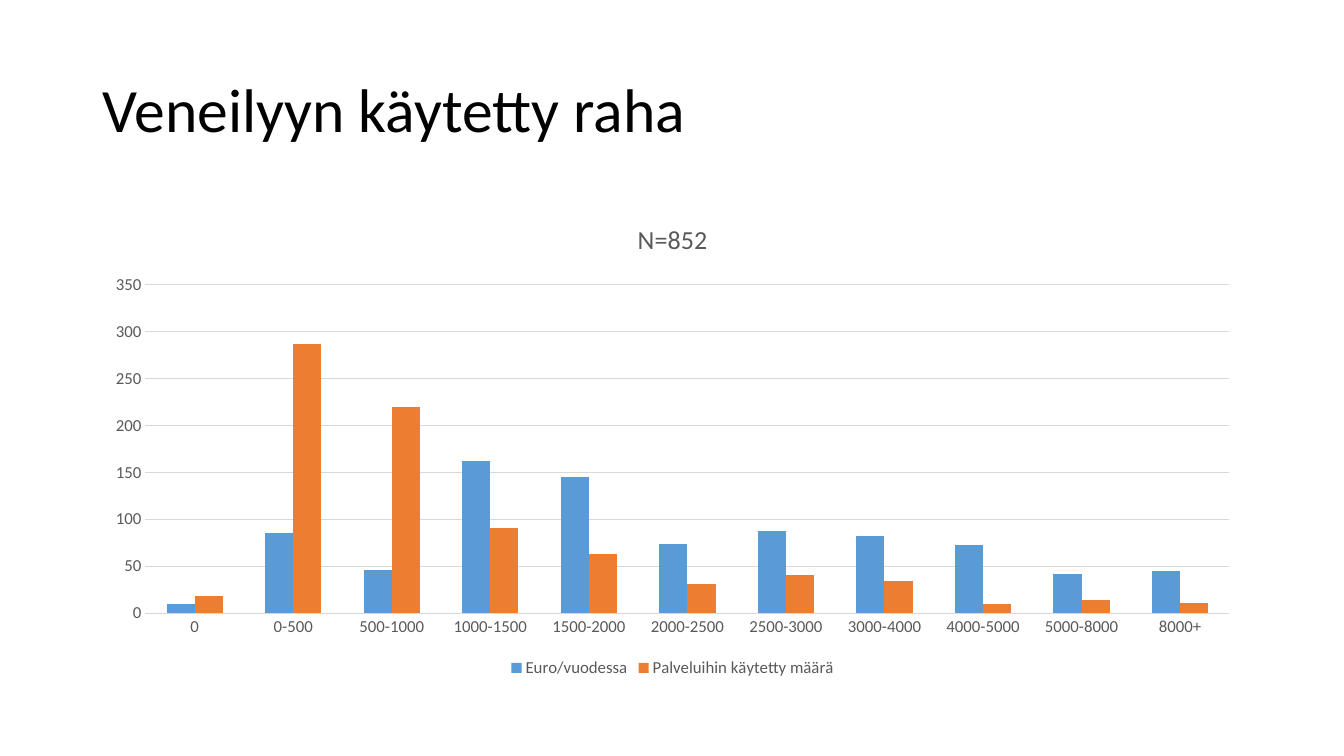
from dataclasses import dataclass

from pptx import Presentation
from pptx import util as u
from pptx.chart.data import CategoryChartData
from pptx.dml.color import RGBColor
from pptx.enum import chart as ch, text


@dataclass(frozen=True)
class Theme:
    font: str = "Calibri"
    title: str = "000000"
    label: str = "595959"
    grid: str = "D9D9D9"
    bars: tuple = ("5B9BD5", "ED7D31")
    title_size: float = 44
    chart_title_size: float = 18.6
    label_size: float = 12


THEME = Theme()
WIDTH, HEIGHT = u.Inches(13.33), u.Inches(7.5)
LEFT, SPAN = 0.069, 0.863
TITLE_BOX = (LEFT, 0.053, SPAN, 0.193)
CHART_BOX = (LEFT, 0.267, SPAN, 0.635)
CATEGORIES = ["0", "0-500", "500-1000", "1000-1500", "1500-2000", "2000-2500",
              "2500-3000", "3000-4000", "4000-5000", "5000-8000", "8000+"]
SERIES = {
    "Euro/vuodessa": [10, 85, 46, 162, 145, 74, 87, 82, 72, 42, 45],
    "Palveluihin käytetty määrä": [18, 287, 219, 91, 63, 31, 40, 34, 10, 14, 11],
}


def place(box):
    x, y, w, h = box
    return int(x * WIDTH), int(y * HEIGHT), int(w * WIDTH), int(h * HEIGHT)


def style_font(font, size, color):
    font.name = THEME.font
    font.size = u.Pt(size)
    font.bold = False
    font.color.rgb = RGBColor.from_string(color)


def style_line(line):
    line.color.rgb = RGBColor.from_string(THEME.grid)
    line.width = u.Pt(0.75)


def add_title(s, words):
    sp = s.shapes.title
    sp.left, sp.top, sp.width, sp.height = place(TITLE_BOX)
    tf = sp.text_frame
    tf.text = words
    tf.word_wrap = True
    tf.vertical_anchor = text.MSO_ANCHOR.MIDDLE
    p = tf.paragraphs[0]
    p.alignment = text.PP_ALIGN.LEFT
    p.line_spacing = 0.9
    style_font(p.font, THEME.title_size, THEME.title)


def style_axis(axis):
    axis.major_tick_mark = axis.minor_tick_mark = ch.XL_TICK_MARK.NONE
    style_font(axis.tick_labels.font, THEME.label_size, THEME.label)


def add_columns(s, heading):
    data = CategoryChartData()
    data.categories = CATEGORIES
    for name, values in SERIES.items():
        data.add_series(name, values)
    chart = s.shapes.add_chart(
        ch.XL_CHART_TYPE.COLUMN_CLUSTERED, *place(CHART_BOX), data).chart
    style_font(chart.font, THEME.label_size, THEME.label)

    chart.has_title = True
    tf = chart.chart_title.text_frame
    tf.text = heading
    style_font(tf.paragraphs[0].font, THEME.chart_title_size, THEME.label)
    chart.chart_title.include_in_layout = False

    chart.has_legend = True
    chart.legend.position = ch.XL_LEGEND_POSITION.BOTTOM
    chart.legend.include_in_layout = False
    style_font(chart.legend.font, THEME.label_size, THEME.label)

    for axis in (chart.category_axis, chart.value_axis):
        style_axis(axis)
    style_line(chart.category_axis.format.line)
    chart.value_axis.format.line.fill.background()
    chart.value_axis.has_major_gridlines = True
    style_line(chart.value_axis.major_gridlines.format.line)

    plot = chart.plots[0]
    plot.gap_width, plot.overlap = 150, 0
    plot.vary_by_categories = False
    for series, color in zip(plot.series, THEME.bars):
        series.format.fill.solid()
        series.format.fill.fore_color.rgb = RGBColor.from_string(color)


def main():
    prs = Presentation()
    prs.slide_width, prs.slide_height = WIDTH, HEIGHT
    s = prs.slides.add_slide(prs.slide_layouts.get_by_name("Title Only"))
    add_title(s, "Veneilyyn käytetty raha")
    add_columns(s, "N=852")
    prs.save("out.pptx")


if __name__ == "__main__":
    main()
